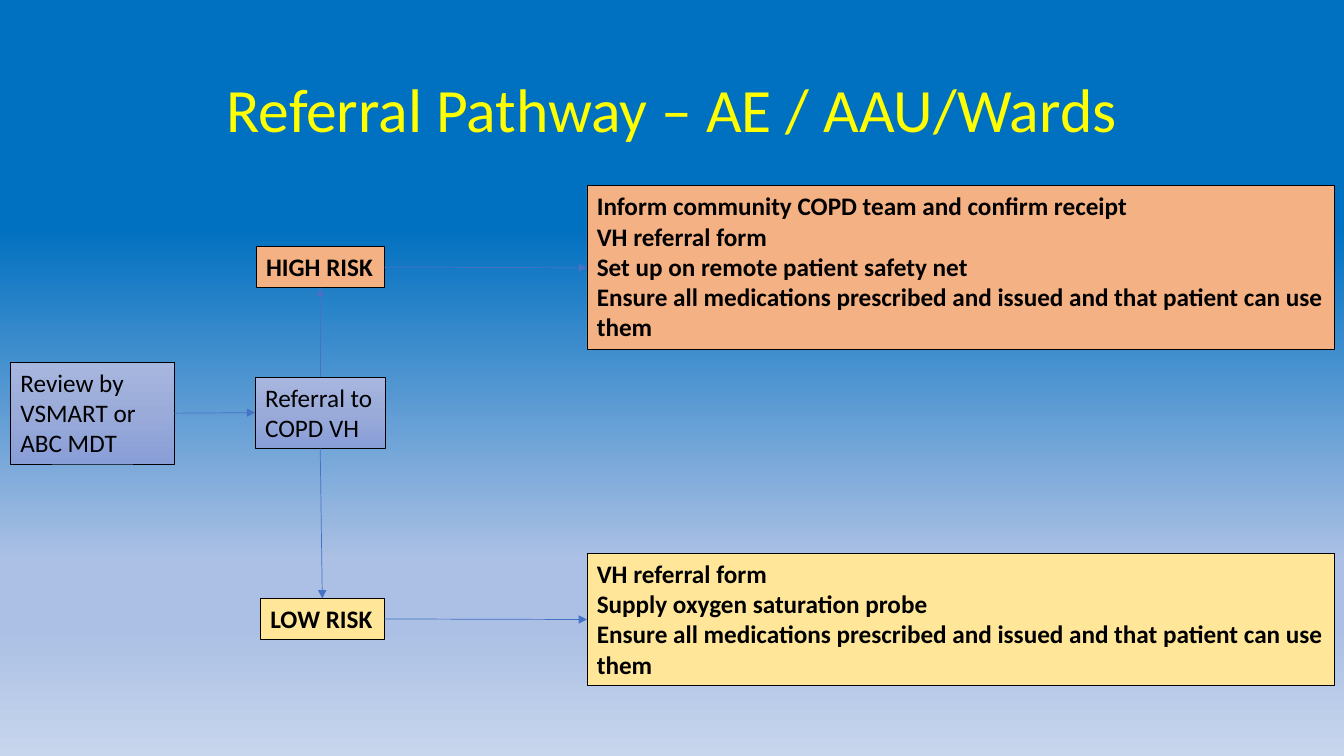
from lxml.etree import SubElement
from pptx import Presentation
from pptx.dml.color import RGBColor
from pptx.enum.shapes import MSO_CONNECTOR as CONN, MSO_SHAPE as SHAPE
from pptx.enum.text import MSO_ANCHOR as ANCHOR, MSO_AUTO_SIZE as AUTO, PP_ALIGN as ALIGN
from pptx.oxml.ns import qn
from pptx.util import Pt

PX = 9525
FONT = "Calibri"
ORANGE, CREAM = "F4B183", "FFE699"
BLUES = [(0, "A8B7DF"), (50, "9AABD9"), (100, "889ED7")]
SKY = [(30, "0070C0"), (74, "ABC0E4"), (83, "ABC0E4"), (100, "C7D5ED")]
TOP, LEFT, BOTTOM, RIGHT = range(4)
ALL_STEPS = "Ensure all medications prescribed and issued and that patient can use them"


def px(*lengths):
    return [round(n * PX) for n in lengths]


def color(hex_code):
    return RGBColor.from_string(hex_code)


def set_gradient(fill, element, stops):
    fill.gradient()
    fill.gradient_angle = 270
    gs_list = element.find(".//" + qn("a:gsLst"))
    for gs in list(gs_list):
        gs_list.remove(gs)
    for percent, hex_code in stops:
        gs = SubElement(gs_list, qn("a:gs"), pos=str(percent * 1000))
        SubElement(gs, qn("a:srgbClr"), val=hex_code)


def style_text(tf, size, hex_code, align, bold=False):
    for p in tf.paragraphs:
        p.alignment = align
        for r in p.runs:
            r.font.name = FONT
            r.font.size = Pt(size)
            r.font.bold = bold
            r.font.color.rgb = color(hex_code)


def add_box(slide, box, text, fill, bold=False, wrap=True):
    sp = slide.shapes.add_shape(SHAPE.RECTANGLE, *px(*box))
    sp.shadow.inherit = False
    if isinstance(fill, str):
        sp.fill.solid()
        sp.fill.fore_color.rgb = color(fill)
    else:
        set_gradient(sp.fill, sp.element, fill)
    sp.line.color.rgb = color("000000")
    sp.line.width = Pt(0.5)
    tf = sp.text_frame
    tf.text = text
    tf.word_wrap = wrap
    tf.auto_size = AUTO.SHAPE_TO_FIT_TEXT
    tf.vertical_anchor = ANCHOR.TOP
    style_text(tf, 18, "000000", ALIGN.LEFT, bold)
    return sp


def add_arrow(slide, start, start_site, end, end_site):
    cxn = slide.shapes.add_connector(CONN.STRAIGHT, 0, 0, 0, 0)
    cxn.begin_connect(start, start_site)
    cxn.end_connect(end, end_site)
    cxn.line.color.rgb = color("4472C4")
    cxn.line.width = Pt(0.5)
    SubElement(cxn.element.spPr.find(qn("a:ln")), qn("a:tailEnd"), type="triangle")
    SubElement(cxn.element.spPr, qn("a:effectLst"))


def add_title(slide, box, text):
    title = slide.shapes.title
    title.left, title.top, title.width, title.height = px(*box)
    tf = title.text_frame
    tf.text = text
    tf.vertical_anchor = ANCHOR.MIDDLE
    tf.paragraphs[0].line_spacing = 0.9
    style_text(tf, 44, "FFFF00", ALIGN.CENTER)


def add_referral(slide, box):
    x, y, w, h = box
    review = add_box(slide, (x, y, 156, h), "Review by VSMART or ABC MDT", BLUES)
    referral = add_box(slide, (x + w - 124, y + (h - 68) // 2, 124, 68),
                       "Referral to COPD VH", BLUES)
    add_arrow(slide, review, RIGHT, referral, LEFT)
    return referral


def add_risk_branch(slide, box, label, label_width, steps, fill):
    x, y, w, h = box
    label_height, label_right, steps_left = 39, 123, 316
    risk = add_box(slide, (x + label_right - label_width, y + (h - label_height) // 2,
                           label_width, label_height), label, fill, True, False)
    actions = add_box(slide, (x + steps_left, y, w - steps_left, h),
                      "\n".join(steps), fill, True)
    add_arrow(slide, risk, RIGHT, actions, LEFT)
    return risk


def main():
    prs = Presentation()
    prs.slide_width, prs.slide_height = px(1280, 720)
    slide = prs.slides.add_slide(prs.slide_layouts[5])
    set_gradient(slide.background.fill, slide.element, SKY)
    add_title(slide, (88, 38, 1104, 139), "Referral Pathway – AE / AAU/Wards")
    referral = add_referral(slide, (10, 345, 357, 97))
    high = add_risk_branch(slide, (243, 177, 1028, 156), "HIGH RISK", 122, [
        "Inform community COPD team and confirm receipt",
        "VH referral form",
        "Set up on remote patient safety net",
        ALL_STEPS,
    ], ORANGE)
    low = add_risk_branch(slide, (243, 527, 1028, 126), "LOW RISK", 118, [
        "VH referral form",
        "Supply oxygen saturation probe",
        ALL_STEPS,
    ], CREAM)
    add_arrow(slide, referral, TOP, high, BOTTOM)
    add_arrow(slide, referral, BOTTOM, low, TOP)
    prs.save("out.pptx")


if __name__ == "__main__":
    main()
